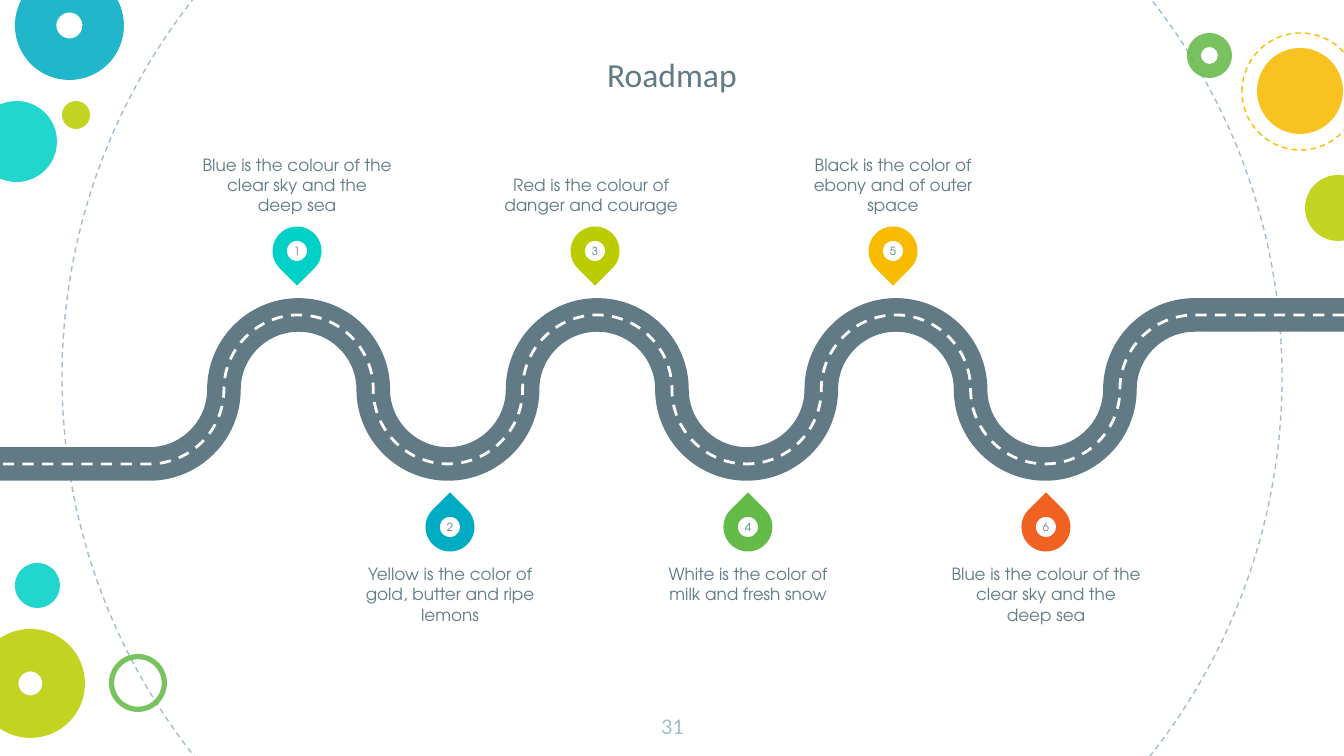
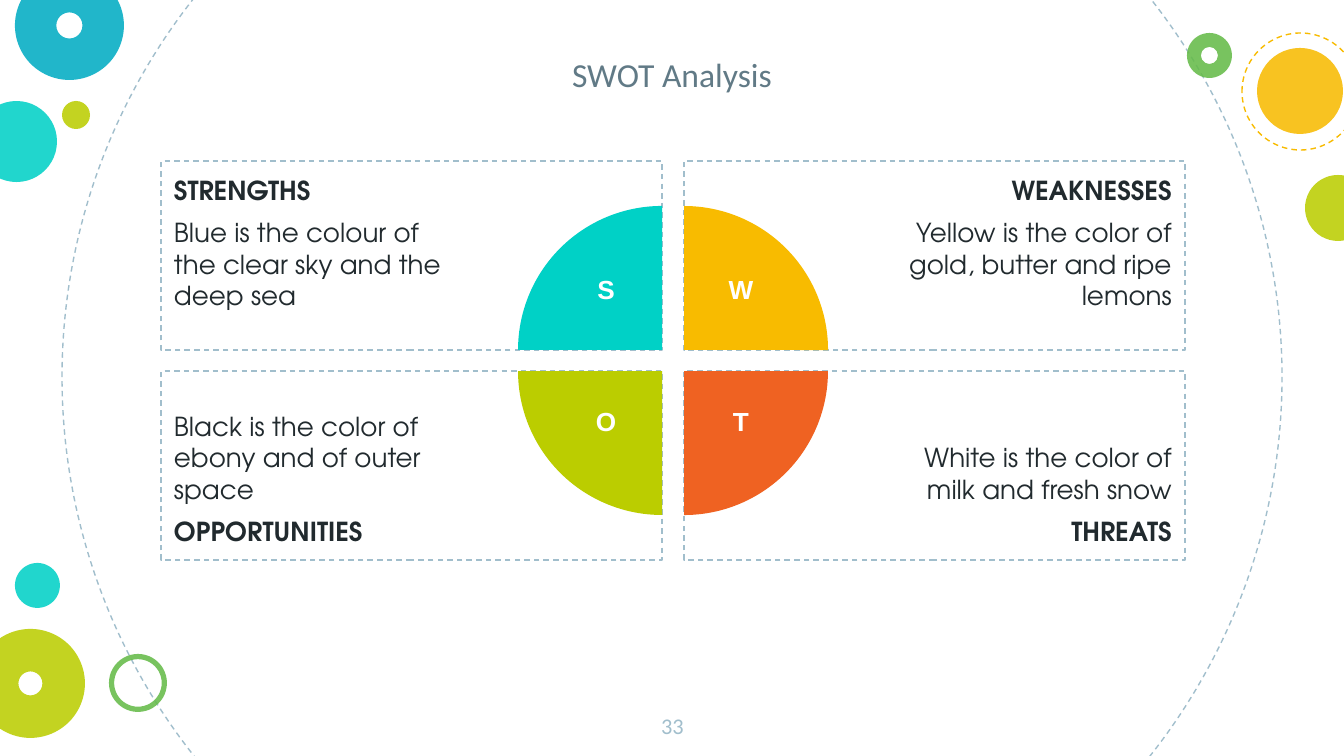
from dataclasses import dataclass

from lxml import etree
from pptx import Presentation
from pptx import util as u
from pptx.dml.color import RGBColor
from pptx.enum import dml, shapes, text
from pptx.oxml.ns import qn

SHAPE = shapes.MSO_SHAPE
ALIGN = text.PP_ALIGN
ANCHOR = text.MSO_ANCHOR
W, H = 1344, 756
EMU_PER_PX = 914400 / 134.4
KAPPA = 0.55  # handle length of a quarter circle, as a share of its radius


@dataclass(frozen=True)
class Theme:
    teal: str = "00D1C6"
    blue: str = "00ACC3"
    lime: str = "BBCD00"
    green: str = "65BB48"
    amber: str = "F8BB00"
    orange: str = "EF6222"
    slate: str = "617A86"
    mist: str = "A1BECC"
    ink: str = "212A2E"
    white: str = "FFFFFF"
    head_font: str = "Calibri"
    body_font: str = "TeX Gyre Adventor"
    letter_font: str = "Arial"
    title_pt: int = 18
    card_pt: int = 14
    number_pt: int = 12
    caption_pt: int = 9
    pin_pt: int = 6
    thin_pt: float = 0.75
    lane_pt: float = 1.5
    road_pt: int = 18
    alpha: int = 87
    inset: int = 13


T = Theme()


def px(n):
    return u.Emu(round(n * EMU_PER_PX))


def rgb(code):
    return RGBColor.from_string(code)


def outline(sp, color, width, dashed=True):
    sp.line.color.rgb = rgb(color)
    sp.line.width = u.Pt(width)
    if dashed:
        sp.line.dash_style = dml.MSO_LINE.DASH


def shape(parent, kind, box, fill=None, line=None, alpha=None, adj=()):
    """Add a flat preset shape, either filled or with a thin dashed outline."""
    sp = parent.shapes.add_shape(kind, *map(px, box))
    sp.shadow.inherit = False
    for i, value in enumerate(adj):
        sp.adjustments[i] = value
    if fill:
        sp.fill.solid()
        sp.fill.fore_color.rgb = rgb(fill)
        if alpha:
            clr = sp.fill._xPr.find(".//" + qn("a:srgbClr"))
            etree.SubElement(clr, qn("a:alpha")).set("val", str(alpha * 1000))
    else:
        sp.fill.background()
    if line:
        outline(sp, line, T.thin_pt)
    else:
        sp.line.fill.background()
    return sp


def write(sp, lines, font, size, color, align=ALIGN.CENTER,
          anchor=ANCHOR.TOP, insets=(0, 0, 0, 0), bold=()):
    """Fill a shape with paragraphs; bold holds the indices of bold ones."""
    tf = sp.text_frame
    tf.word_wrap = True
    tf.vertical_anchor = anchor
    tf.margin_left, tf.margin_top, tf.margin_right, tf.margin_bottom = map(px, insets)
    tf.text = "\n".join(lines)
    for i, p in enumerate(tf.paragraphs):
        p.alignment = align
        for r in p.runs:
            r.font.name, r.font.size = font, u.Pt(size)
            r.font.bold = i in bold
            r.font.color.rgb = rgb(color)
    return tf


def label(s, box, line, *style, **options):
    return write(s.shapes.add_textbox(*map(px, box)), [line], *style, **options)


def backdrop(s):
    """Draw the large dashed ring and the bubbles in the corners."""
    shape(s, SHAPE.OVAL, (62, -233, 1220, 1220), line=T.mist)
    bubbles = (  # left, top, diameter, colour, ring thickness
        (-24, 101, 81, T.teal, None),
        (15, -29, 109, T.blue, 0.38),
        (62, 101, 28, T.lime, None),
        (109, 654, 58, T.green, 0.09),
        (-24, 629, 109, T.lime, 0.39),
        (1187, 33, 45, T.green, 0.31),
        (1257, 48, 86, T.amber, None),
        (1305, 175, 66, T.lime, None),
        (15, 563, 45, T.teal, None),
    )
    for x, y, d, color, ring in bubbles:
        kind, adj = (SHAPE.DONUT, (ring,)) if ring else (SHAPE.OVAL, ())
        shape(s, kind, (x, y, d, d), color, alpha=T.alpha, adj=adj)
    shape(s, SHAPE.OVAL, (1242, 33, 117, 117), line=T.amber)


def new_slide(prs, title, number):
    s = prs.slides.add_slide(prs.slide_layouts[6])
    backdrop(s)
    insets = (T.inset,) * 4
    label(s, (638, 699, 69, 58), number, T.head_font, T.number_pt, T.mist,
          insets=insets)
    label(s, (284, 13, 776, 94), title, T.head_font, T.title_pt, T.slate,
          anchor=ANCHOR.BOTTOM, insets=insets)
    return s


def road_knots(box):
    """List the ends of the straights and quarter circles, from right to left."""
    x, y, w, h = box
    levels = (y, y + h / 2, y + h, y + h / 2)
    bends = [(x + w / 18 * k, levels[-k % 4]) for k in range(16, 1, -1)]
    return [(x + w, y), *bends, (x, y + h)]


def round_bends(sp):
    """Turn every segment but the first and last into a quarter circle."""
    path = sp._element.find(".//" + qn("a:path"))
    knots = [(int(pt.get("x")), int(pt.get("y"))) for pt in path.iter(qn("a:pt"))]
    bends = path.findall(qn("a:lnTo"))[1:-1]
    for i, (segment, (x0, y0), (x1, y1)) in enumerate(zip(bends, knots[1:], knots[2:])):
        dx, dy = round(KAPPA * (x1 - x0)), round(KAPPA * (y1 - y0))
        if i % 2 == 0:
            handles = (x0 + dx, y0), (x1, y1 - dy)
        else:
            handles = (x0, y0 + dy), (x1 - dx, y1)
        curve = etree.Element(qn("a:cubicBezTo"))
        for x, y in (*handles, (x1, y1)):
            etree.SubElement(curve, qn("a:pt"), x=str(x), y=str(y))
        path.replace(segment, curve)


def road(s, box):
    knots = [(px(x), px(y)) for x, y in road_knots(box)]
    for color, width, dashed in ((T.slate, T.road_pt, False),
                                 (T.white, T.lane_pt, True)):
        builder = s.shapes.build_freeform(*knots[0])
        builder.add_line_segments(knots[1:], close=False)
        sp = builder.convert_to_shape()
        round_bends(sp)
        sp.shadow.inherit = False
        sp.fill.background()
        outline(sp, color, width, dashed)


def pin(s, cx, cy, number, color, above):
    """Group a drop that points at the road with its numbered dot."""
    drop, dot = 49, 20
    group = s.shapes.add_group_shape()
    sp = shape(group, SHAPE.TEAR, (cx - drop / 2, cy - drop / 2, drop, drop), color)
    sp.rotation = 135 if above else 315
    sp = shape(group, SHAPE.OVAL, (cx - dot / 2, cy - dot / 2, dot, dot), T.white)
    write(sp, [str(number)], T.body_font, T.pin_pt, T.slate, anchor=ANCHOR.MIDDLE)


def roadmap_slide(prs):
    s = new_slide(prs, "Roadmap", "31")
    road(s, (0, 315, W, 149))
    stops = (  # colour, caption, caption shift
        (T.teal, "Blue is the colour of the clear sky and the deep sea", 0),
        (T.blue, "Yellow is the color of gold, butter and ripe lemons", 0),
        (T.lime, "Red is the colour of danger and courage", -4),
        (T.green, "White is the color of milk and fresh snow", 0),
        (T.amber, "Black is the color of ebony and of outer space", 0),
        (T.orange, "Blue is the colour of the clear sky and the deep sea", 0),
    )
    pitch, cap_w, cap_h = 298, 189, 78
    for i, (color, caption, shift) in enumerate(stops):
        above = i % 2 == 0
        first, pin_y, cap_y = (297, 251, 137) if above else (450, 527, 564)
        cx = first + i // 2 * pitch
        pin(s, cx, pin_y, i + 1, color, above)
        label(s, (cx + shift - cap_w / 2, cap_y, cap_w, cap_h), caption,
              T.body_font, T.caption_pt, T.slate,
              anchor=ANCHOR.BOTTOM if above else ANCHOR.TOP)


def swot_card(s, box, right, lower, heading, body):
    near, far = T.inset, 202
    insets = (far, near, near, near) if right else (near, near, far, near)
    sp = shape(s, SHAPE.RECTANGLE, box, line=T.mist)
    tf = write(sp, [body, heading] if lower else [heading, body],
               T.body_font, T.card_pt, T.ink,
               align=ALIGN.RIGHT if right else ALIGN.LEFT,
               anchor=ANCHOR.BOTTOM if lower else ANCHOR.TOP,
               insets=insets, bold=(int(lower),))
    p = tf.paragraphs[-1]
    p.space_before = p.space_after = u.Pt(6)


def swot_quarter(s, box, right, lower, color):
    """Draw the quarter disc centred on the card's inner corner."""
    x, y, w, h = box
    d = 288
    cx, cy = x + (0 if right else w), y + (0 if lower else h)
    sp = shape(s, SHAPE.PIE, (cx - d / 2, cy - d / 2, d, d), color, adj=(108, 162))
    sp.rotation = {(0, 0): 0, (1, 0): 90, (1, 1): 180, (0, 1): 270}[right, lower]


def swot_letter(s, box, right, lower, letter, width):
    x, y, w, h = box
    cx = x + (57 if right else w - 56)
    top = y + (27 if lower else h - 84)
    label(s, (cx - width / 2, top, width, 54), letter, T.letter_font, T.card_pt,
          T.white, insets=(13, 7, 13, 7), bold=(0,))


def swot_slide(prs):
    s = new_slide(prs, "SWOT Analysis", "33")
    quarters = (  # heading, body, colour, letter box width
        ("STRENGTHS", "Blue is the colour of the clear sky and the deep sea", T.teal, 43),
        ("WEAKNESSES", "Yellow is the color of gold, butter and ripe lemons", T.amber, 69),
        ("OPPORTUNITIES", "Black is the color of ebony and of outer space", T.lime, 51),
        ("THREATS", "White is the color of milk and fresh snow", T.orange, 42),
    )
    left, top, w, h, gap_x, gap_y = 161, 161, 501, 189, 22, 21
    places = []
    for i in range(len(quarters)):
        lower, right = divmod(i, 2)
        box = (left + right * (w + gap_x), top + lower * (h + gap_y), w, h)
        places.append((box, right, lower))
    for place, (heading, body, _, _) in zip(places, quarters):
        swot_card(s, *place, heading, body)
    for place, (_, _, color, _) in zip(places, quarters):
        swot_quarter(s, *place, color)
    for place, (heading, _, _, width) in zip(places, quarters):
        swot_letter(s, *place, heading[0], width)


def main():
    prs = Presentation()
    prs.slide_width, prs.slide_height = px(W), px(H)
    roadmap_slide(prs)
    swot_slide(prs)
    prs.save("out.pptx")


if __name__ == "__main__":
    main()
